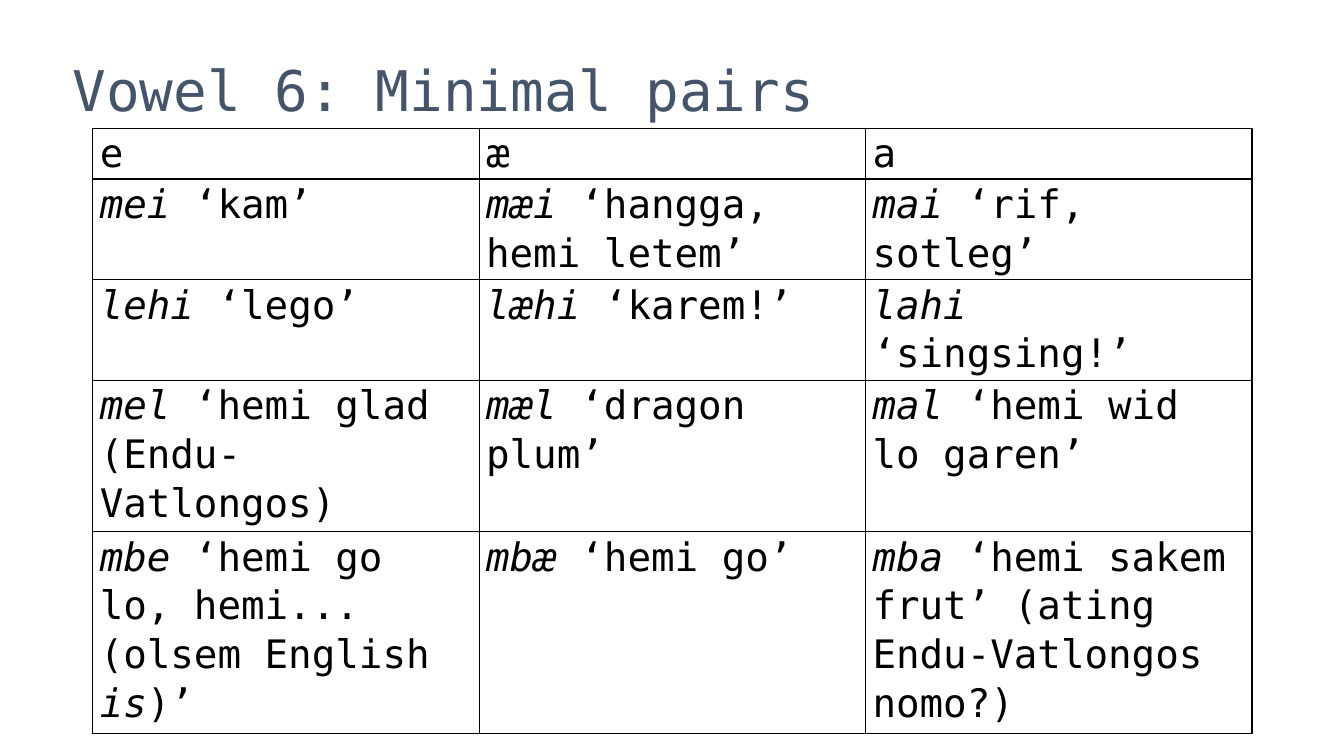
from dataclasses import dataclass

import pptx
import pptx.dml.color
import pptx.enum.text
import pptx.oxml
import pptx.oxml.ns
import pptx.util

FONT = "DejaVu Sans Mono"
BLACK = "000000"
SLATE = "44546A"
SLIDE_W = pptx.util.Inches(13.33)
SLIDE_H = pptx.util.Inches(7.5)
LINE_SHARE = 0.5 / 7.5  # height of one text line in the table


@dataclass(frozen=True)
class Span:
    text: str
    italic: bool = False


@dataclass(frozen=True)
class Row:
    lines: int
    cells: tuple[tuple[Span, ...], ...]


def word(form: str, gloss: str) -> tuple[Span, ...]:
    """An italic word form followed by its upright gloss."""
    return Span(form + " ", True), Span(gloss)


ROWS = (
    Row(1, ((Span("e"),), (Span("æ"),), (Span("a"),))),
    Row(2, (word("mei", "‘kam’"),
            word("mæi", "‘hangga, hemi letem’"),
            word("mai", "‘rif, sotleg’"))),
    Row(2, (word("lehi", "‘lego’"),
            word("læhi", "‘karem!’"),
            word("lahi", "‘singsing!’"))),
    Row(3, (word("mel", "‘hemi glad (Endu-Vatlongos)"),
            word("mæl", "‘dragon plum’"),
            word("mal", "‘hemi wid lo garen’"))),
    Row(4, (word("mbe", "‘hemi go lo, hemi... (olsem English ")
            + (Span("is", True), Span(")’")),
            word("mbæ", "‘hemi go’"),
            word("mba", "‘hemi sakem frut’ (ating Endu-Vatlongos nomo?)"))),
)


def rgb(value: str) -> pptx.dml.color.RGBColor:
    return pptx.dml.color.RGBColor.from_string(value)


def across(share: float) -> int:
    return round(SLIDE_W * share)


def down(share: float) -> int:
    return round(SLIDE_H * share)


def style_run(r, size: float, color: str, italic: bool = False) -> None:
    r.font.name = FONT
    r.font.size = pptx.util.Pt(size)
    r.font.bold = False
    r.font.italic = italic
    r.font.color.rgb = rgb(color)


def add_borders(cell, color: str, width: float) -> None:
    tc_pr = cell._tc.get_or_add_tcPr()
    for side in ("lnL", "lnR", "lnT", "lnB"):
        tc_pr.append(pptx.oxml.parse_xml(
            f'<a:{side} {pptx.oxml.ns.nsdecls("a")} w="{pptx.util.Pt(width)}">'
            f'<a:solidFill><a:srgbClr val="{color}"/></a:solidFill></a:{side}>'))


def fill_cell(cell, spans: tuple[Span, ...]) -> None:
    cell.margin_left = cell.margin_right = pptx.util.Inches(0.07)
    cell.margin_top = cell.margin_bottom = 0
    add_borders(cell, BLACK, 1)
    cell.fill.background()
    p = cell.text_frame.paragraphs[0]
    p.line_spacing = 1.07
    p.space_after = pptx.util.Pt(8)
    for span in spans:
        r = p.add_run()
        r.text = span.text
        style_run(r, 28, BLACK, span.italic)


def add_title(s, text: str) -> None:
    sp = s.shapes.title
    sp.left, sp.top = across(0.0465), down(0.067)
    sp.width, sp.height = across(0.913), down(0.103)
    tf = sp.text_frame
    tf.text = text
    tf.word_wrap = True
    tf.auto_size = pptx.enum.text.MSO_AUTO_SIZE.SHAPE_TO_FIT_TEXT
    tf.vertical_anchor = pptx.enum.text.MSO_ANCHOR.MIDDLE
    p = tf.paragraphs[0]
    p.alignment = pptx.enum.text.PP_ALIGN.LEFT
    style_run(p.runs[0], 40, SLATE)


def add_pairs_table(s, rows: tuple[Row, ...]) -> None:
    total_lines = sum(row.lines for row in rows)
    table = s.shapes.add_table(
        len(rows), len(rows[0].cells), across(0.069), down(0.17),
        across(0.8625), down(LINE_SHARE * total_lines)).table
    table.first_row = table.horz_banding = False
    for i, row in enumerate(rows):
        table.rows[i].height = down(LINE_SHARE * row.lines)
        for j, spans in enumerate(row.cells):
            fill_cell(table.cell(i, j), spans)


def main() -> None:
    prs = pptx.Presentation()
    prs.slide_width, prs.slide_height = SLIDE_W, SLIDE_H
    s = prs.slides.add_slide(prs.slide_layouts[5])  # title only

    # Heading
    add_title(s, "Vowel 6: Minimal pairs")

    # Minimal pairs, one vowel per column
    add_pairs_table(s, ROWS)

    prs.save("out.pptx")


if __name__ == "__main__":
    main()
